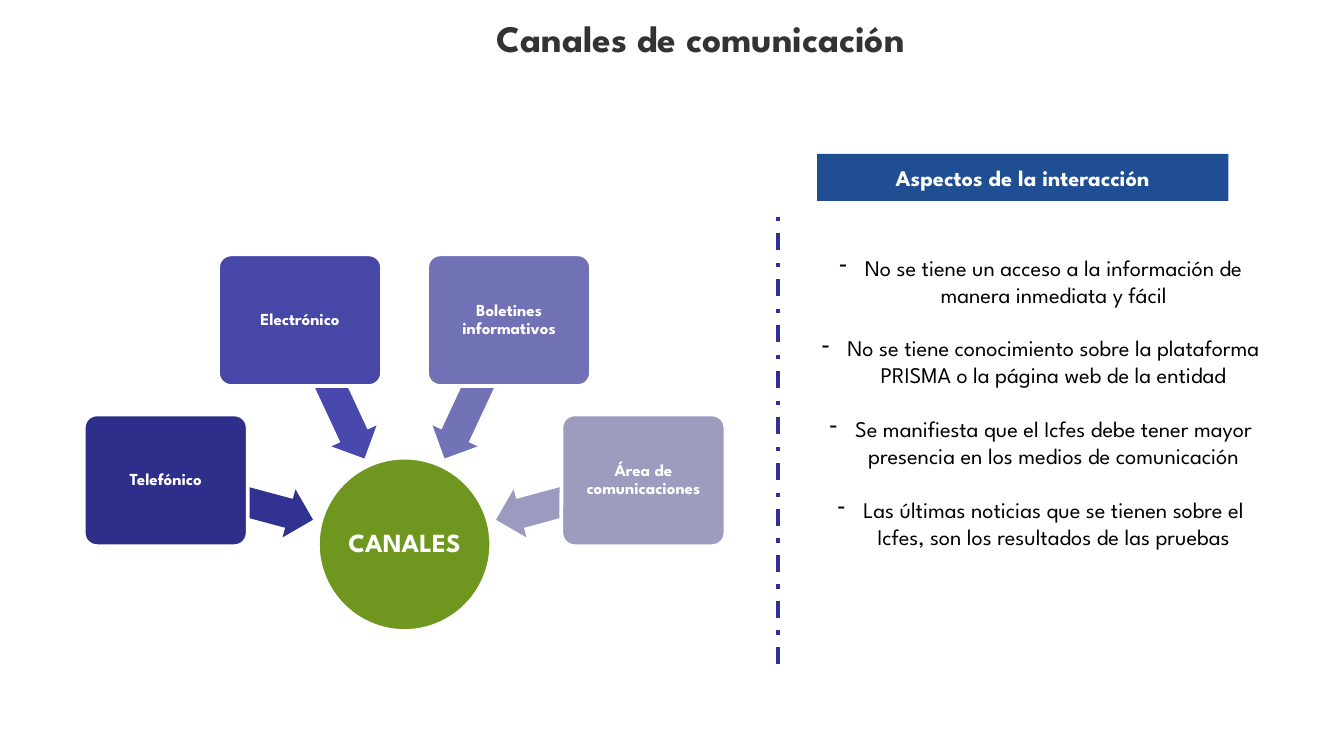
from math import cos, radians, sin

from lxml import etree
from pptx import Presentation
from pptx.dml.color import RGBColor
from pptx.enum.dml import MSO_LINE
from pptx.enum.shapes import MSO_CONNECTOR, MSO_SHAPE
from pptx.enum.text import MSO_ANCHOR, PP_ALIGN
from pptx.oxml.ns import qn
from pptx.util import Inches, Pt

CENTER = PP_ALIGN.CENTER
TOP = MSO_ANCHOR.TOP
MIDDLE = MSO_ANCHOR.MIDDLE
ELLIPSE = MSO_SHAPE.OVAL
RECTANGLE = MSO_SHAPE.RECTANGLE
ROUNDED = MSO_SHAPE.ROUNDED_RECTANGLE
LEFT_ARROW = MSO_SHAPE.LEFT_ARROW
STRAIGHT = MSO_CONNECTOR.STRAIGHT
DASH_DOT = MSO_LINE.DASH_DOT

FONT = "League Spartan"
COLORS = {
    "title": "333333",
    "body": "000000",
    "white": "FFFFFF",
    "hub": "6F971F",
    "divider": "2F2F98",
    "banner": "204E93",
}

SLIDE_WIDTH = 10
SLIDE_HEIGHT = SLIDE_WIDTH * 9 / 16
HUB_X, HUB_Y, HUB_SIZE = 3.01, 4.05, 1.29
ARROW_RADIUS, NODE_RADIUS = 1.27, 1.84
FIRST_ANGLE, ANGLE_STEP = 195, 50
CHANNELS = [
    ("Telefónico", "2E2E8B", "313192"),
    ("Electrónico", "4747A8", "4949AD"),
    ("Boletines informativos", "7171B5", "7272B6"),
    ("Área de comunicaciones", "9C9CBF", "9B9BBF"),
]
ASPECTS = [
    "No se tiene un acceso a la información de manera inmediata y fácil",
    "No se tiene conocimiento sobre la plataforma PRISMA o la página web de la entidad",
    "Se manifiesta que el Icfes debe tener mayor presencia en los medios de comunicación",
    "Las últimas noticias que se tienen sobre el Icfes, son los resultados de las pruebas",
]


def write_text(shape, paragraphs, size=12, color=COLORS["white"], bold=False, anchor=MIDDLE,
               inset=None, line_spacing=None, gap=0, bullet=None):
    frame = shape.text_frame
    frame.word_wrap = True
    frame.vertical_anchor = anchor
    if inset is not None:
        frame.margin_left = frame.margin_right = Inches(inset)
        frame.margin_top = frame.margin_bottom = Inches(inset)
    for index, text in enumerate(paragraphs):
        paragraph = frame.add_paragraph() if index else frame.paragraphs[0]
        paragraph.alignment = CENTER
        if line_spacing:
            paragraph.line_spacing = line_spacing
        if index and gap:
            paragraph.space_before = Pt(gap)
        if bullet:
            properties = paragraph._p.get_or_add_pPr()
            properties.set("marL", str(Inches(0.19)))
            properties.set("indent", str(-Inches(0.19)))
            etree.SubElement(properties, qn("a:buFontTx"))
            etree.SubElement(properties, qn("a:buChar")).set("char", bullet)
        run = paragraph.add_run()
        run.text = text
        run.font.name = FONT
        run.font.size = Pt(size)
        run.font.bold = bold
        run.font.color.rgb = RGBColor.from_string(color)


class SlideBuilder:
    def __init__(self, slide):
        self.slide = slide

    def text(self, left, top, width, height, paragraphs, **style):
        box = self.slide.shapes.add_textbox(
            Inches(left), Inches(top), Inches(width), Inches(height))
        write_text(box, paragraphs, anchor=TOP, **style)

    def shape(self, kind, center_x, center_y, width, height, fill,
              outline=None, adjustments=(), rotation=0):
        shape = self.slide.shapes.add_shape(
            kind, Inches(center_x - width / 2), Inches(center_y - height / 2),
            Inches(width), Inches(height))
        shape.shadow.inherit = False
        shape.fill.solid()
        shape.fill.fore_color.rgb = RGBColor.from_string(fill)
        if outline:
            shape.line.color.rgb = RGBColor.from_string(outline)
            shape.line.width = Pt(2)
        else:
            shape.line.fill.background()
        for index, value in enumerate(adjustments):
            shape.adjustments[index] = value
        shape.rotation = rotation
        return shape

    def hub(self, label):
        shape = self.shape(ELLIPSE, HUB_X, HUB_Y, HUB_SIZE, HUB_SIZE,
                           COLORS["hub"], COLORS["white"])
        write_text(shape, [label], size=14, bold=True, inset=0.01, line_spacing=0.9)

    def channel(self, label, angle, node_fill, arrow_fill):
        across, down = cos(radians(angle)), sin(radians(angle))
        self.shape(LEFT_ARROW, HUB_X + ARROW_RADIUS * across, HUB_Y + ARROW_RADIUS * down,
                   1.13, 0.37, arrow_fill, adjustments=(0.6, 0.5), rotation=angle)
        node = self.shape(ROUNDED, HUB_X + NODE_RADIUS * across, HUB_Y + NODE_RADIUS * down,
                          1.22, 0.98, node_fill, COLORS["white"], adjustments=(0.1,))
        write_text(node, [label], size=9, bold=True, inset=0.02, line_spacing=0.9)

    def divider(self, x, start, end):
        connector = self.slide.shapes.add_connector(
            STRAIGHT, Inches(x), Inches(start), Inches(x), Inches(end))
        connector.line.color.rgb = RGBColor.from_string(COLORS["divider"])
        connector.line.width = Pt(2.25)
        connector.line.dash_style = DASH_DOT
        etree.SubElement(connector._element.spPr, qn("a:effectLst"))

    def banner(self, label):
        shape = self.shape(RECTANGLE, 7.61, 1.32, 3.06, 0.35, COLORS["banner"])
        write_text(shape, [label], bold=True)


def main():
    presentation = Presentation()
    presentation.slide_width = Inches(SLIDE_WIDTH)
    presentation.slide_height = Inches(SLIDE_HEIGHT)
    builder = SlideBuilder(presentation.slides.add_slide(presentation.slide_layouts[6]))

    builder.text(1.38, 0.06, 7.67, 0.42, ["Canales de comunicación"],
                 size=20, color=COLORS["title"], bold=True)
    builder.hub("CANALES")
    for index, (label, node_fill, arrow_fill) in enumerate(CHANNELS):
        builder.channel(label, FIRST_ANGLE + index * ANGLE_STEP, node_fill, arrow_fill)
    builder.divider(5.79, 4.94, 1.6)
    builder.text(5.94, 1.84, 3.61, 3.13, ASPECTS,
                 color=COLORS["body"], gap=14.4, bullet="-")
    builder.banner("Aspectos de la interacción")
    presentation.save("out.pptx")


if __name__ == "__main__":
    main()
